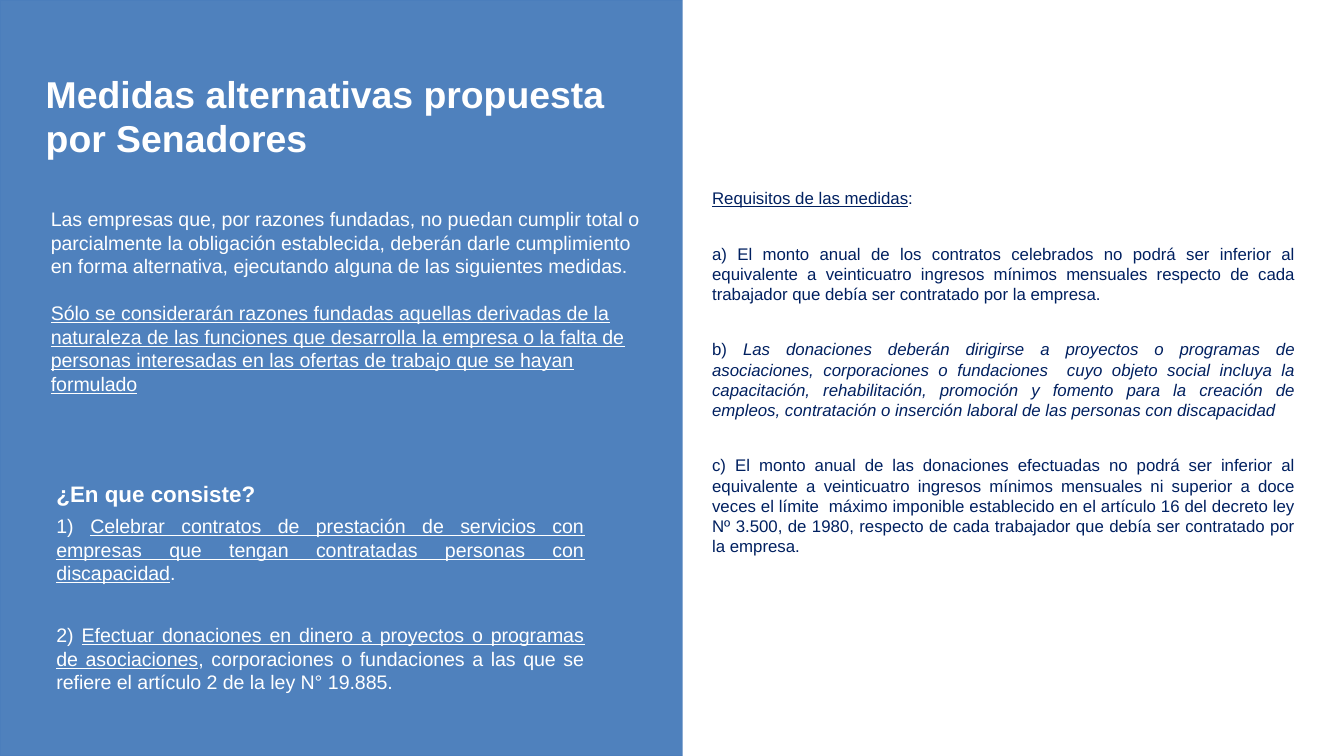
from pptx import Presentation
from pptx.dml.color import RGBColor
from pptx.enum.shapes import MSO_SHAPE
from pptx.enum.text import MSO_ANCHOR, PP_ALIGN
from pptx.util import Inches, Pt

COLORS = {"blue": "4F81BD", "edge": "4B7EBC", "white": "FFFFFF", "navy": "002060"}
FONT = "Arial"


def add_panel(slide, left, width, color):
    panel = slide.shapes.add_shape(
        MSO_SHAPE.RECTANGLE, Inches(left), 0, Inches(width), Inches(5.625))
    panel.shadow.inherit = False
    panel.fill.solid()
    panel.fill.fore_color.rgb = RGBColor.from_string(COLORS[color])
    panel.line.fill.background()
    return panel


def write_paragraphs(frame, paragraphs, color, justified=False):
    """Fill a frame from (size, space before, runs); a run is (text, styles b, i, u)."""
    frame.word_wrap = True
    for index, (size, space, runs) in enumerate(paragraphs):
        paragraph = frame.paragraphs[0] if index == 0 else frame.add_paragraph()
        paragraph.alignment = PP_ALIGN.JUSTIFY if justified else PP_ALIGN.LEFT
        paragraph.space_before = Pt(space)
        if justified:
            paragraph._p.get_or_add_pPr().set("marL", str(Inches(0.12)))
        for text, styles in runs:
            run = paragraph.add_run()
            run.text = text
            run.font.name = FONT
            run.font.size = Pt(size)
            run.font.bold = "b" in styles
            run.font.italic = "i" in styles
            run.font.underline = "u" in styles
            run.font.color.rgb = RGBColor.from_string(COLORS[color])


presentation = Presentation()
presentation.slide_width = Inches(10)
presentation.slide_height = Inches(5.625)
slide = presentation.slides.add_slide(presentation.slide_layouts[5])

# Background panels, with the title in front of them
blue_panel = add_panel(slide, 0, 10, "blue")
blue_panel.line.color.rgb = RGBColor.from_string(COLORS["edge"])
blue_panel.line.width = Pt(0.75)
white_panel = add_panel(slide, 5.08, 4.92, "white")

title = slide.shapes.title
white_panel.element.addnext(title.element)
title.left, title.top = Inches(0.24), Inches(0.46)
title.width, title.height = Inches(4.43), Inches(0.8)
title.text_frame.vertical_anchor = MSO_ANCHOR.MIDDLE
write_paragraphs(title.text_frame, [
    (20, 0, [("Medidas alternativas propuesta por Senadores", "b")]),
], "white")

# Introduction
introduction = slide.shapes.add_textbox(
    Inches(0.28), Inches(1.89), Inches(4.59), Inches(0.7))
introduction.text_frame.vertical_anchor = MSO_ANCHOR.MIDDLE
write_paragraphs(introduction.text_frame, [
    (10.5, 0, [("Las empresas que, por razones fundadas, no puedan cumplir total o "
                "parcialmente la obligación establecida, deberán darle cumplimiento en "
                "forma alternativa, ejecutando alguna de las siguientes medidas.", "")]),
    (10.5, 12.6, [("Sólo se considerarán razones fundadas aquellas derivadas de la "
                   "naturaleza de las funciones que desarrolla la empresa o la falta de "
                   "personas interesadas en las ofertas de trabajo que se hayan "
                   "formulado", "u")]),
], "white")

# Alternative measures
measures = slide.shapes.add_textbox(
    Inches(0.24), Inches(3.51), Inches(4.17), Inches(1.75))
frame = measures.text_frame
frame.margin_left = frame.margin_right = Inches(0.06)
frame.margin_top = frame.margin_bottom = Inches(0.06)
write_paragraphs(frame, [
    (12, 0, [("¿En que consiste?", "b")]),
    (10.5, 4, [("1) ", ""),
               ("Celebrar contratos de prestación de servicios con empresas que tengan "
                "contratadas personas con discapacidad", "u"),
               (".", "")]),
    (10.5, 20.6, [("2) ", ""),
                  ("Efectuar donaciones en dinero a proyectos o programas de "
                   "asociaciones", "u"),
                  (", corporaciones o fundaciones a las que se refiere el artículo 2 de "
                   "la ley N° 19.885.", "")]),
], "white", justified=True)

# Requirements
requirements = slide.shapes.add_textbox(
    Inches(5.08), Inches(1.35), Inches(4.65), Inches(2.71))
write_paragraphs(requirements.text_frame, [
    (9, 0, [("Requisitos de las medidas", "u"), (":", "")]),
    (9, 18.8, [("a) El monto anual de los contratos celebrados no podrá ser inferior al "
                "equivalente a veinticuatro ingresos mínimos mensuales respecto de cada "
                "trabajador que debía ser contratado por la empresa.", "")]),
    (9, 18.8, [("b) ", ""),
               ("Las donaciones deberán dirigirse a proyectos o programas de "
                "asociaciones, corporaciones o fundaciones  cuyo objeto social incluya "
                "la capacitación, rehabilitación, promoción y fomento para la creación "
                "de empleos, contratación o inserción laboral de las personas con "
                "discapacidad", "i")]),
    (9, 18.8, [("c) El monto anual de las donaciones efectuadas no podrá ser inferior al "
                "equivalente a veinticuatro ingresos mínimos mensuales ni superior a doce "
                "veces el límite  máximo imponible establecido en el artículo 16 del "
                "decreto ley Nº 3.500, de 1980, respecto de cada trabajador que debía "
                "ser contratado por la empresa.", "")]),
], "navy", justified=True)

presentation.save("out.pptx")
